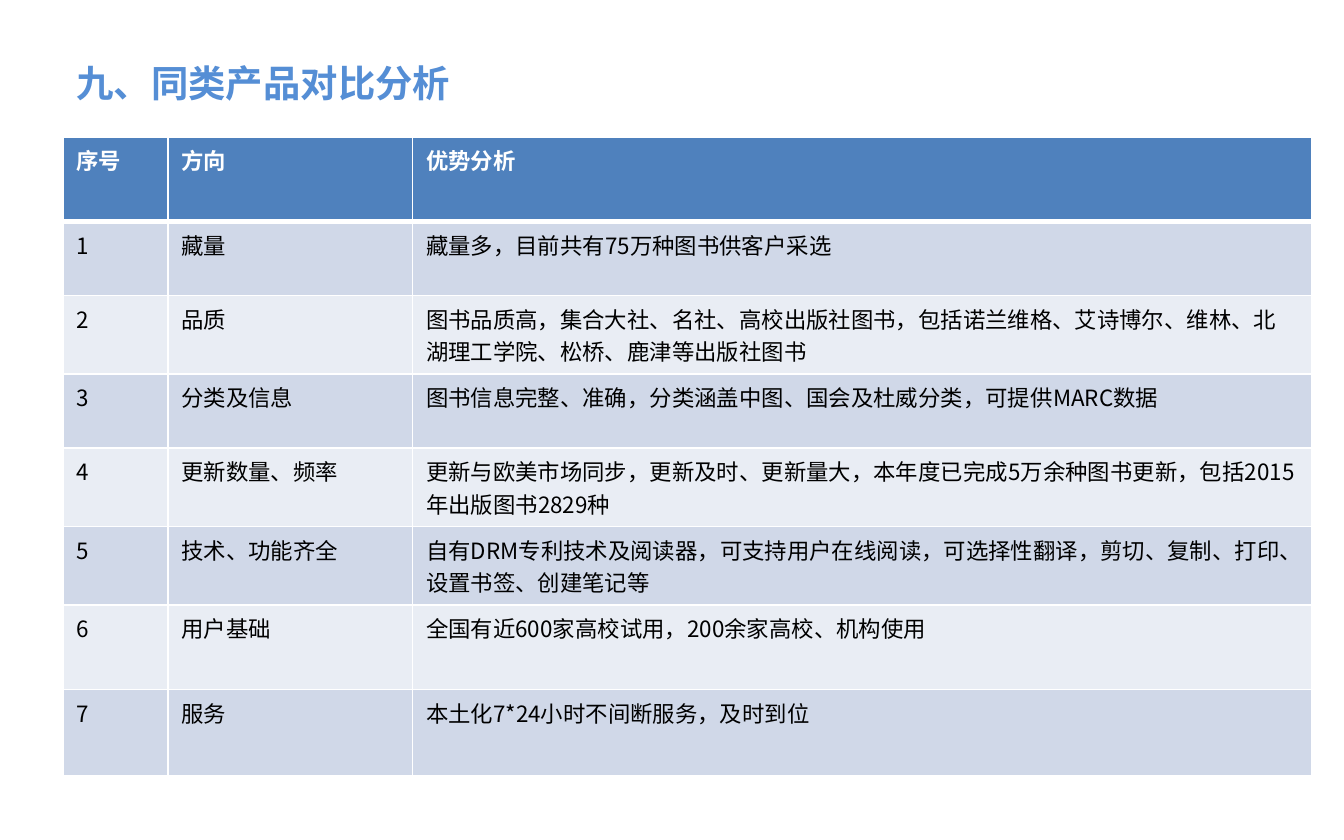
import dataclasses

import pptx
import pptx.dml.color
import pptx.enum.text
import pptx.oxml
import pptx.oxml.ns
import pptx.util

RGBColor = pptx.dml.color.RGBColor

EMU_PER_PX = 9144  # 100 px to the inch
FONT = "Noto Sans CJK SC"
WHITE = RGBColor(0xFF, 0xFF, 0xFF)
BLACK = RGBColor(0x00, 0x00, 0x00)
TITLE_BLUE = RGBColor(0x55, 0x8E, 0xD5)
HEADER_BLUE = RGBColor(0x4F, 0x81, 0xBD)
BAND_DARK = RGBColor(0xD0, 0xD8, 0xE8)
BAND_LIGHT = RGBColor(0xE9, 0xED, 0xF4)

LEFT = 47
COLUMN_WIDTHS = (78, 182, 669)
HEADER_HEIGHT = 63
HEADINGS = ("序号", "方向", "优势分析")


@dataclasses.dataclass(frozen=True)
class Advantage:
    direction: str
    analysis: str
    height: int = 55


ADVANTAGES = (
    Advantage("藏量", "藏量多，目前共有75万种图书供客户采选"),
    Advantage("品质", "图书品质高，集合大社、名社、高校出版社图书，包括诺兰维格、艾诗博尔、"
                    "维林、北湖理工学院、松桥、鹿津等出版社图书"),
    Advantage("分类及信息", "图书信息完整、准确，分类涵盖中图、国会及杜威分类，可提供MARC数据"),
    Advantage("更新数量、频率", "更新与欧美市场同步，更新及时、更新量大，本年度已完成5万余种图书更新，"
                         "包括2015年出版图书2829种"),
    Advantage("技术、功能齐全", "自有DRM专利技术及阅读器，可支持用户在线阅读，可选择性翻译，剪切、复制、打印、"
                         "设置书签、创建笔记等"),
    Advantage("用户基础", "全国有近600家高校试用，200余家高校、机构使用", 63),
    Advantage("服务", "本土化7*24小时不间断服务，及时到位", 64),
)


def px(length: int) -> pptx.util.Emu:
    return pptx.util.Emu(length * EMU_PER_PX)


def write_text(text_frame, text: str, *, size: int = 12, color: RGBColor = BLACK,
               bold: bool = False, line_spacing: float | None = None) -> None:
    paragraph = text_frame.paragraphs[0]
    paragraph.line_spacing = line_spacing
    run = paragraph.add_run()
    run.text = text
    run.font.size = pptx.util.Pt(size)
    run.font.bold = bold
    run.font.color.rgb = color
    run.font.name = FONT
    # East Asian characters take their own typeface element
    east_asian = pptx.oxml.parse_xml(
        f'<a:ea {pptx.oxml.ns.nsdecls("a")} typeface="{FONT}"/>')
    run.font._element.append(east_asian)


def set_borders(cell, *, top: int = 1, bottom: int = 1) -> None:
    properties = cell._tc.get_or_add_tcPr()
    sides = {"lnL": 1, "lnR": 1, "lnT": top, "lnB": bottom}
    for position, (side, points) in enumerate(sides.items()):
        line = pptx.oxml.parse_xml(
            f'<a:{side} {pptx.oxml.ns.nsdecls("a")} w="{pptx.util.Pt(points)}">'
            f'<a:solidFill><a:srgbClr val="{WHITE}"/></a:solidFill></a:{side}>')
        properties.insert(position, line)


def add_comparison_table(slide) -> None:
    heights = (HEADER_HEIGHT, *(advantage.height for advantage in ADVANTAGES))
    rows = [HEADINGS] + [
        (str(number), advantage.direction, advantage.analysis)
        for number, advantage in enumerate(ADVANTAGES, start=1)]
    table = slide.shapes.add_table(
        len(rows), len(COLUMN_WIDTHS), px(LEFT), px(102),
        px(sum(COLUMN_WIDTHS)), px(sum(heights))).table
    for column, width in zip(table.columns, COLUMN_WIDTHS):
        column.width = px(width)

    for row_index, (texts, height) in enumerate(zip(rows, heights)):
        table.rows[row_index].height = px(height)
        is_header = row_index == 0
        band = BAND_DARK if row_index % 2 else BAND_LIGHT
        for column_index, text in enumerate(texts):
            cell = table.cell(row_index, column_index)
            cell.fill.solid()
            cell.fill.fore_color.rgb = HEADER_BLUE if is_header else band
            set_borders(cell, top=3 if row_index == 1 else 1,
                        bottom=3 if is_header else 1)
            write_text(cell.text_frame, text, bold=is_header,
                       color=WHITE if is_header else BLACK)


def add_title(slide) -> None:
    shape = slide.shapes.add_textbox(px(LEFT), px(23), px(602), px(61))
    shape.text_frame.word_wrap = True
    shape.text_frame.auto_size = pptx.enum.text.MSO_AUTO_SIZE.SHAPE_TO_FIT_TEXT
    write_text(shape.text_frame, "九、同类产品对比分析", size=20,
               color=TITLE_BLUE, bold=True, line_spacing=1.5)


def main() -> None:
    presentation = pptx.Presentation()
    presentation.slide_width = px(1000)
    presentation.slide_height = px(625)
    slide = presentation.slides.add_slide(presentation.slide_layouts[6])
    add_comparison_table(slide)
    add_title(slide)
    presentation.save("out.pptx")


if __name__ == "__main__":
    main()
